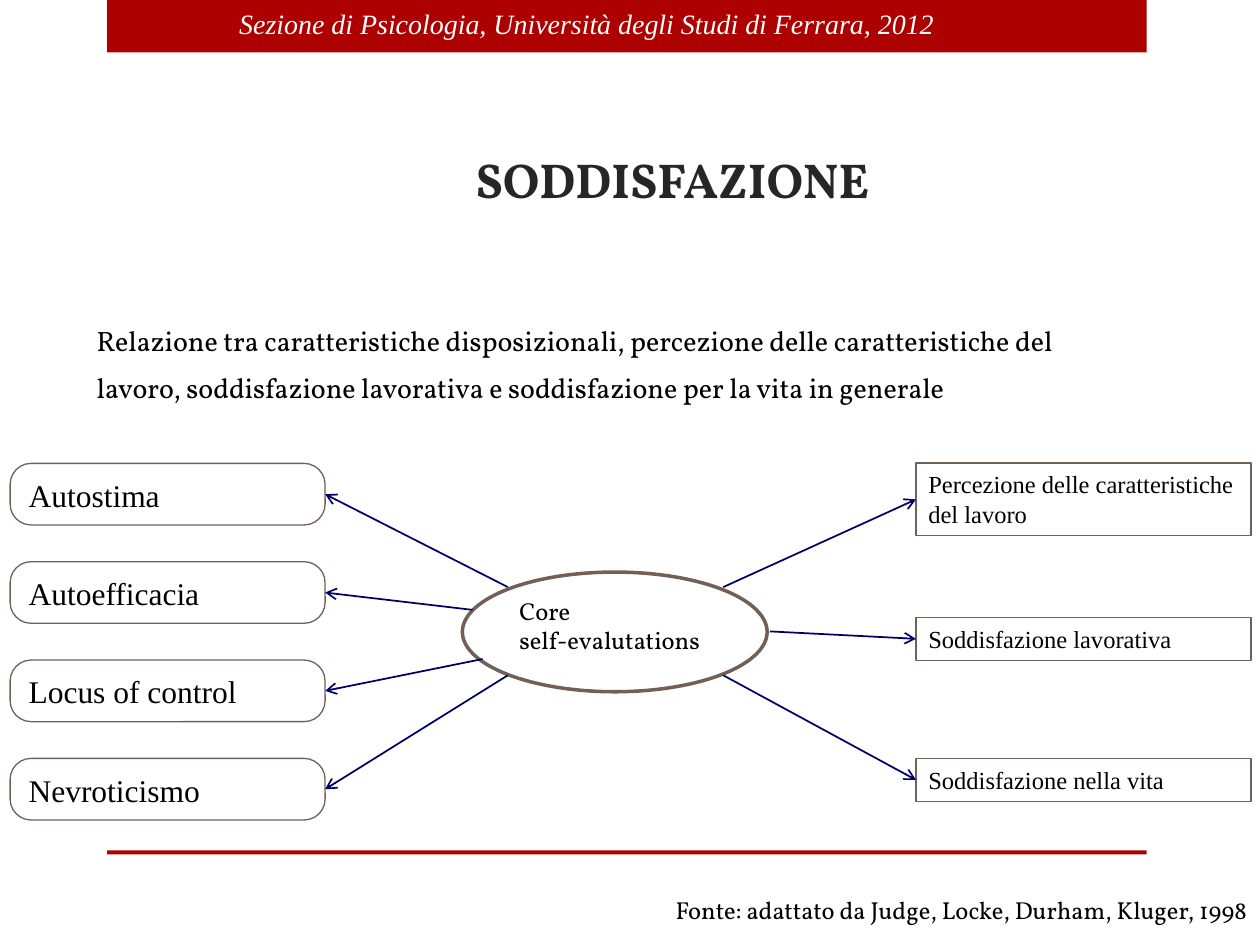
"""Builds the slide on core self-evaluations and satisfaction."""
import pptx
import pptx.dml.color
import pptx.enum.shapes
import pptx.enum.text
import pptx.oxml
import pptx.oxml.ns
import pptx.util

Pt = pptx.util.Pt
RGBColor = pptx.dml.color.RGBColor
SHAPES = pptx.enum.shapes.MSO_SHAPE
ALIGN = pptx.enum.text.PP_ALIGN
ANCHOR = pptx.enum.text.MSO_ANCHOR

RED = RGBColor(0xAD, 0x01, 0x01)
WHITE = RGBColor(0xFF, 0xFF, 0xFF)
BLACK = RGBColor(0x00, 0x00, 0x00)
CHARCOAL = RGBColor(0x26, 0x26, 0x26)
BROWN = RGBColor(0x72, 0x60, 0x56)
NAVY = RGBColor(0x00, 0x00, 0x66)
SERIF = "Times New Roman"
DISPLAY = "Vollkorn"


def write(box, text, font, size, color=BLACK, align=ALIGN.LEFT, anchor=ANCHOR.TOP):
    frame = box.text_frame
    frame.word_wrap = True
    frame.vertical_anchor = anchor
    frame.text = text
    for paragraph in frame.paragraphs:
        paragraph.alignment = align
        for run in paragraph.runs:
            run.font.name = font
            run.font.size = Pt(size)
            run.font.color.rgb = color
    return frame.paragraphs[0]


def outlined(kind, left, top, width, height, weight):
    shape = slide.shapes.add_shape(kind, Pt(left), Pt(top), Pt(width), Pt(height))
    shape.shadow.inherit = False
    shape.fill.background()
    shape.line.color.rgb = BROWN
    shape.line.width = Pt(weight)
    return shape


presentation = pptx.Presentation()
presentation.slide_width = Pt(720)
presentation.slide_height = Pt(540)
slide = presentation.slides.add_slide(presentation.slide_layouts[6])

for top, height in [(0, 30), (486, 2.2)]:
    band = slide.shapes.add_shape(SHAPES.RECTANGLE, Pt(61.2), Pt(top), Pt(594), Pt(height))
    band.shadow.inherit = False
    band.fill.solid()
    band.fill.fore_color.rgb = RED
    band.line.fill.background()

header = slide.shapes.add_textbox(Pt(129.6), Pt(0), Pt(422), Pt(26.6))
credit = write(header, "Sezione di Psicologia, Università degli Studi di Ferrara, 2012", SERIF, 16, WHITE)
credit.runs[0].font.italic = True

title = slide.shapes.add_textbox(Pt(59.8), Pt(72), Pt(648.7), Pt(50.4))
heading = write(title, "SODDISFAZIONE", DISPLAY, 28, CHARCOAL, ALIGN.CENTER, ANCHOR.BOTTOM)
heading.runs[0].font.bold = True

introduction = slide.shapes.add_textbox(Pt(48.2), Pt(173.5), Pt(596.2), Pt(61.2))
relation = write(
    introduction,
    "Relazione tra caratteristiche disposizionali, percezione delle caratteristiche "
    "del lavoro, soddisfazione lavorativa e soddisfazione per la vita in generale",
    DISPLAY, 16)
relation.line_spacing = 1.4

source = slide.shapes.add_textbox(Pt(123.8), Pt(507.6), Pt(596.2), Pt(32.4))
write(source, "Fonte: adattato da Judge, Locke, Durham, Kluger, 1998", DISPLAY, 14, align=ALIGN.RIGHT)

core = outlined(SHAPES.OVAL, 264.2, 326.9, 174.2, 68.4, 2)
write(core, "Core\nself-evalutations", DISPLAY, 14)

links = []
traits = [
    ("Autostima", 290.2, 335.5),
    ("Autoefficacia", 270, 348.5),
    ("Locus of control", 275.8, 376.6),
    ("Nevroticismo", 290.2, 385.9),
]
for row, (name, start_x, start_y) in enumerate(traits):
    trait = outlined(SHAPES.ROUNDED_RECTANGLE, 5.8, 264.8 + 56.2 * row, 180, 35.2, 0.75)
    trait.adjustments[0] = 0.34
    write(trait, name, SERIF, 18)
    links.append((trait, 3, start_x, start_y))

outcomes = [
    ("Percezione delle caratteristiche del lavoro", 264.6, 41.6, 413.3, 335.5),
    ("Soddisfazione lavorativa", 352.8, 24.5, 439.9, 360.8),
    ("Soddisfazione nella vita", 433.4, 24.5, 413.3, 385.9),
]
for name, top, height, start_x, start_y in outcomes:
    outcome = outlined(SHAPES.RECTANGLE, 523.4, top, 191.5, height, 0.75)
    write(outcome, name, SERIF, 14)
    links.append((outcome, 1, start_x, start_y))

for target, side, start_x, start_y in links:
    arrow = slide.shapes.add_connector(
        pptx.enum.shapes.MSO_CONNECTOR.STRAIGHT, Pt(start_x), Pt(start_y), Pt(start_x), Pt(start_y))
    arrow.end_connect(target, side)
    arrow.line.color.rgb = NAVY
    arrow.line.width = Pt(1)
    head = pptx.oxml.parse_xml(f'<a:tailEnd {pptx.oxml.ns.nsdecls("a")} type="arrow"/>')
    arrow.line._get_or_add_ln().append(head)
    no_effects = pptx.oxml.parse_xml(f'<a:effectLst {pptx.oxml.ns.nsdecls("a")}/>')
    arrow._element.spPr.append(no_effects)

presentation.save("out.pptx")
